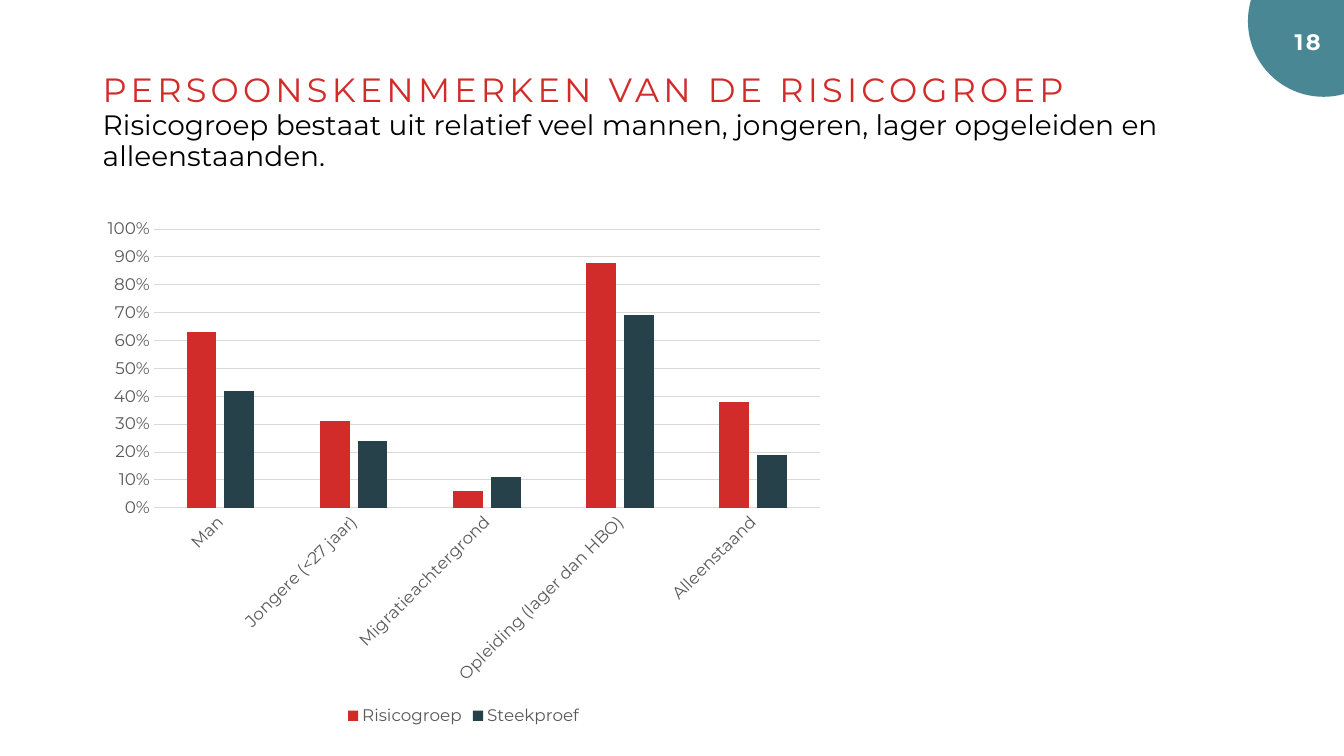
from pptx import Presentation
from pptx.chart.data import CategoryChartData
from pptx.dml.color import RGBColor
from pptx.enum.chart import XL_CHART_TYPE, XL_LEGEND_POSITION, XL_TICK_MARK
from pptx.enum.shapes import MSO_SHAPE
from pptx.enum.text import MSO_ANCHOR, PP_ALIGN
from pptx.util import Cm, Pt

CLUSTERED = XL_CHART_TYPE.COLUMN_CLUSTERED
LEGEND_BOTTOM = XL_LEGEND_POSITION.BOTTOM
NO_TICK = XL_TICK_MARK.NONE
ELLIPSE = MSO_SHAPE.OVAL
TOP = MSO_ANCHOR.TOP
LEFT, RIGHT = PP_ALIGN.LEFT, PP_ALIGN.RIGHT

FONT = "Montserrat"
COLORS = {
    "white": "FEFFFE",
    "teal": "498794",
    "red": "D22C2A",
    "navy": "264149",
    "black": "000000",
    "label": "595959",
    "grid": "D9D9D9",
}
MARGIN = Cm(2.34)

CATEGORIES = ["Man", "Jongere (<27 jaar)", "Migratieachtergrond",
              "Opleiding (lager dan HBO)", "Alleenstaand"]
SERIES = [
    ("Risicogroep", "red", [0.63, 0.31, 0.06, 0.88, 0.38]),
    ("Steekproef", "navy", [0.42, 0.24, 0.11, 0.69, 0.19]),
]


def rgb(name):
    return RGBColor.from_string(COLORS[name])


def style_font(font, size, color):
    font.name = FONT
    font.size = Pt(size)
    font.color.rgb = rgb(color)


def add_text(slide, text, box, size, color, align=LEFT, bold=False,
             spacing=0, line_spacing=None):
    shape = slide.shapes.add_textbox(*box)
    text_frame = shape.text_frame
    text_frame.word_wrap = True
    text_frame.vertical_anchor = TOP
    text_frame.text = text
    paragraph = text_frame.paragraphs[0]
    paragraph.alignment = align
    if line_spacing:
        paragraph.line_spacing = line_spacing
    font = paragraph.runs[0].font
    style_font(font, size, color)
    font.bold = bold
    # Letter spacing is given in hundredths of a point
    if spacing:
        paragraph.runs[0].font._element.set("spc", str(round(spacing * 100)))


def add_circle(slide, left, top, diameter, color):
    shape = slide.shapes.add_shape(ELLIPSE, left, top, diameter, diameter)
    shape.shadow.inherit = False
    shape.fill.solid()
    shape.fill.fore_color.rgb = rgb(color)
    shape.line.fill.background()


def style_axis(axis):
    axis.major_tick_mark = NO_TICK
    axis.minor_tick_mark = NO_TICK
    style_font(axis.tick_labels.font, 12, "label")


def style_line(line):
    line.color.rgb = rgb("grid")
    line.width = Pt(0.75)


def add_column_chart(slide, box):
    chart_data = CategoryChartData(number_format="0%")
    chart_data.categories = CATEGORIES
    for name, _, values in SERIES:
        chart_data.add_series(name, values)
    chart = slide.shapes.add_chart(CLUSTERED, *box, chart_data).chart
    chart.has_title = False
    style_font(chart.font, 10, "black")

    # Columns
    plot = chart.plots[0]
    plot.gap_width = 219
    plot.overlap = -27
    plot.vary_by_categories = False
    for series, (_, color, _) in zip(plot.series, SERIES):
        series.format.fill.solid()
        series.format.fill.fore_color.rgb = rgb(color)

    # Category axis with slanted labels
    category_axis = chart.category_axis
    style_axis(category_axis)
    style_line(category_axis.format.line)
    for body in chart.element.xpath(".//c:catAx/c:txPr/a:bodyPr"):
        body.set("rot", "-2700000")

    # Value axis
    value_axis = chart.value_axis
    style_axis(value_axis)
    value_axis.minimum_scale = 0
    value_axis.maximum_scale = 1
    value_axis.major_unit = 0.1
    value_axis.tick_labels.number_format = "0%"
    value_axis.tick_labels.number_format_is_linked = False
    value_axis.format.line.fill.background()
    style_line(value_axis.major_gridlines.format.line)

    # Legend
    chart.has_legend = True
    chart.legend.position = LEGEND_BOTTOM
    chart.legend.include_in_layout = False
    style_font(chart.legend.font, 12, "label")


def main():
    presentation = Presentation()
    presentation.slide_width = Cm(33.87)
    presentation.slide_height = Cm(19.05)
    slide = presentation.slides.add_slide(presentation.slide_layouts[6])
    slide.background.fill.solid()
    slide.background.fill.fore_color.rgb = rgb("white")

    # Page number in the corner circle
    add_circle(slide, Cm(31.45), Cm(-1.37), Cm(3.81), "teal")
    add_text(slide, "18", (Cm(28.93), Cm(0.58), Cm(4.6), Cm(0.94)),
             16, "white", align=RIGHT, bold=True, spacing=1.8)

    # Heading and message
    add_text(slide, "PERSOONSKENMERKEN VAN DE RISICOGROEP",
             (MARGIN, Cm(1.73), Cm(29.2), Cm(0.84)),
             24, "red", spacing=3, line_spacing=0.9)
    add_text(slide, "Risicogroep bestaat uit relatief veel mannen, jongeren, "
             "lager opgeleiden en alleenstaanden.",
             (MARGIN, Cm(2.69), Cm(29.2), Cm(2.03)),
             20, "black", line_spacing=0.9)

    # Comparison of risk group and sample
    add_column_chart(slide, (MARGIN, Cm(5.26), Cm(18.69), Cm(13.13)))

    presentation.save("out.pptx")


if __name__ == "__main__":
    main()
